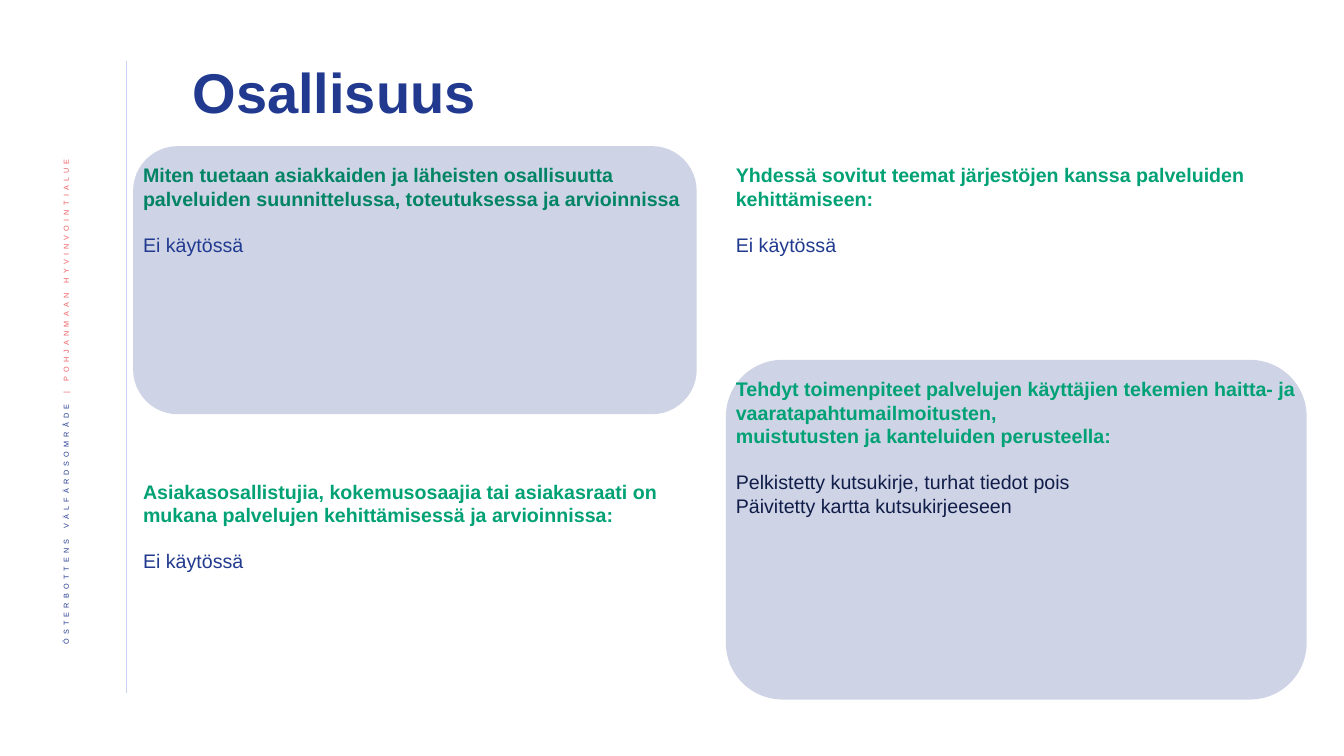
from lxml.etree import SubElement
from pptx import Presentation
from pptx.dml.color import RGBColor
from pptx.enum.shapes import MSO_CONNECTOR, MSO_SHAPE
from pptx.enum.text import MSO_ANCHOR, PP_ALIGN
from pptx.oxml.ns import qn
from pptx.util import Inches, Pt

NAVY, GREEN, TEAL, DARK, CORAL = "213A8F", "00A174", "008464", "101D48", "EB5C5F"


def style(run, size, color, bold=False):
    looks = {"name": "Arial", "size": Pt(size), "bold": bold}
    for key, value in looks.items():
        setattr(run.font, key, value)
    run.font.color.rgb = RGBColor.from_string(color)


def add_box(left, top, width, height):
    box = slide.shapes.add_textbox(Inches(left), Inches(top), Inches(width), Inches(height))
    box.text_frame.word_wrap = True
    return box.text_frame


deck = Presentation()
deck.slide_width, deck.slide_height = Inches(13.33), Inches(7.5)
slide = deck.slides.add_slide(deck.slide_layouts[5])

# Side rule and vertical organisation name
rule = slide.shapes.add_connector(
    MSO_CONNECTOR.STRAIGHT, Inches(1.25), Inches(0.61), Inches(1.25), Inches(6.88))
rule.line.color.rgb = RGBColor.from_string("C9D2F2")
rule.line.width = Pt(0.5)
SubElement(rule._element.spPr, qn("a:effectLst"))

side = add_box(0.42, 1.42, 0.52, 5.73)
side.vertical_anchor = MSO_ANCHOR.MIDDLE
side._txBody.bodyPr.set("vert", "vert270")
line = side.paragraphs[0]
line.alignment = PP_ALIGN.RIGHT
line.line_spacing = 0.9
for words, color in [("ÖSTERBOTTENS VÄLFÄRDSOMRÅDE ", NAVY),
                     ("| POHJANMAAN HYVINVOINTIALUE ", CORAL)]:
    run = line.add_run()
    run.text = words
    style(run, 9, color)
    props = run._r.get_or_add_rPr()
    props.set("baseline", "30000")
    props.set("spc", "300")

# Title
title = slide.shapes.title
title.left, title.top = Inches(1.81), Inches(0.45)
title.width, title.height = Inches(9.98), Inches(0.99)
title.text_frame.vertical_anchor = MSO_ANCHOR.MIDDLE
head = title.text_frame.paragraphs[0]
head.alignment = PP_ALIGN.LEFT
head.line_spacing = 0.9
run = head.add_run()
run.text = "Osallisuus"
style(run, 40, NAVY, True)

# Topics: left, top, width, text height, panel height, colours, headings, answers
LEFT, RIGHT = (1.32, 5.59), (7.2, 5.76)
topics = [
    (LEFT, 1.57, 1.28, 2.66, TEAL, NAVY,
     ["Miten tuetaan asiakkaiden ja läheisten osallisuutta palveluiden "
      "suunnittelussa, toteutuksessa ja arvioinnissa"],
     ["Ei käytössä"]),
    (RIGHT, 1.57, 1.28, None, GREEN, NAVY,
     ["Yhdessä sovitut teemat järjestöjen kanssa palveluiden kehittämiseen:"],
     ["Ei käytössä"]),
    (LEFT, 4.71, 1.28, None, GREEN, NAVY,
     ["Asiakasosallistujia, kokemusosaajia tai asiakasraati on mukana "
      "palvelujen kehittämisessä ja arvioinnissa:"],
     ["Ei käytössä"]),
    (RIGHT, 3.69, 2.52, 3.37, GREEN, DARK,
     ["Tehdyt toimenpiteet palvelujen käyttäjien tekemien haitta- ja "
      "vaaratapahtumailmoitusten,",
      "muistutusten ja kanteluiden perusteella:"],
     ["Pelkistetty kutsukirje, turhat tiedot pois",
      "Päivitetty kartta kutsukirjeeseen"]),
]
for (left, width), top, height, panel, tint, ink, heads, notes in topics:
    if panel:
        card = slide.shapes.add_shape(
            MSO_SHAPE.ROUNDED_RECTANGLE,
            Inches(left), Inches(top - 0.12), Inches(width), Inches(panel))
        card.shadow.inherit = False
        card.line.fill.background()
        card.fill.solid()
        card.fill.fore_color.rgb = RGBColor.from_string(NAVY)
        shade = card._element.spPr.find(qn("a:solidFill"))[0]
        SubElement(shade, qn("a:alpha")).set("val", "22000")
    frame = add_box(left, top, width, height)
    for i, words in enumerate(heads + notes):
        para = frame.add_paragraph() if i else frame.paragraphs[0]
        if i == len(heads):
            para.space_before = Pt(16)
        run = para.add_run()
        run.text = words
        bold = i < len(heads)
        style(run, 14, tint if bold else ink, bold)

deck.save("out.pptx")
